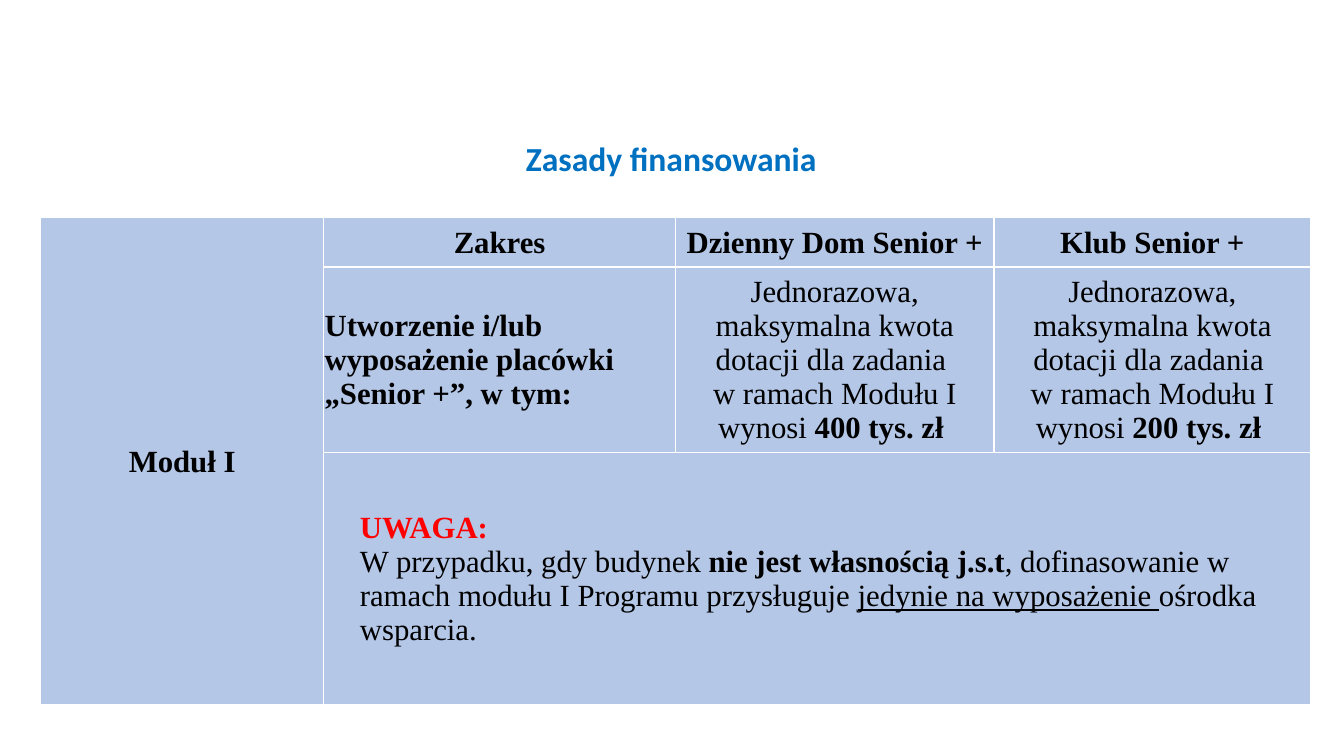
from lxml.etree import SubElement
from pptx import Presentation
from pptx.dml.color import RGBColor
from pptx.enum.text import MSO_ANCHOR, MSO_AUTO_SIZE, PP_ALIGN
from pptx.oxml.ns import qn
from pptx.util import Cm, Pt


def color(value):
    return RGBColor.from_string(value)


class FinancingSlide:
    title_color = "0070C0"
    cell_fill = "B4C7E7"
    border_color = "FFFFFF"
    text_color = "000000"
    warning_color = "FF0000"

    def __init__(self, presentation):
        self.slide = presentation.slides.add_slide(presentation.slide_layouts[5])

    def format_font(self, paragraph, name, size, font_color):
        paragraph.font.name = name
        paragraph.font.size = Pt(size)
        paragraph.font.color.rgb = color(font_color)

    def add_title(self, text, left, top, width, height):
        title = self.slide.shapes.title
        title.left, title.top = Cm(left), Cm(top)
        title.width, title.height = Cm(width), Cm(height)
        frame = title.text_frame
        frame.text = text
        frame.word_wrap = True
        frame.auto_size = MSO_AUTO_SIZE.SHAPE_TO_FIT_TEXT
        frame.vertical_anchor = MSO_ANCHOR.TOP
        paragraph = frame.paragraphs[0]
        paragraph.alignment = PP_ALIGN.CENTER
        paragraph.line_spacing = 1.0
        self.format_font(paragraph, "Calibri", 24, self.title_color)
        paragraph.font.bold = True

    def add_table(self, left, top, widths, heights):
        frame = self.slide.shapes.add_table(
            len(heights), len(widths), Cm(left), Cm(top),
            Cm(sum(widths)), Cm(sum(heights)))
        table = frame.table
        table.first_row = table.horz_banding = False
        for column, width in zip(table.columns, widths):
            column.width = Cm(width)
        for row, height in zip(table.rows, heights):
            row.height = Cm(height)
        for cell in table.iter_cells():
            self.format_cell(cell)
        return table

    def format_cell(self, cell):
        properties = cell._tc.get_or_add_tcPr()
        for side in ("a:lnL", "a:lnR", "a:lnT", "a:lnB"):
            line = SubElement(properties, qn(side), w=str(Pt(1)))
            fill = SubElement(line, qn("a:solidFill"))
            SubElement(fill, qn("a:srgbClr"), val=self.border_color)
        cell.fill.solid()
        cell.fill.fore_color.rgb = color(self.cell_fill)
        cell.vertical_anchor = MSO_ANCHOR.MIDDLE
        cell.margin_left = cell.margin_right = cell.margin_top = Cm(0.02)
        cell.margin_bottom = 0

    def add_text(self, paragraph, *parts, alignment=PP_ALIGN.CENTER, font_color=None):
        """Each part is a text with its bold and underline settings."""
        paragraph.alignment = alignment
        self.format_font(paragraph, "Times New Roman", 22, font_color or self.text_color)
        for text, bold, underline in parts:
            for index, line in enumerate(text.split("\n")):
                if index:
                    paragraph.add_line_break()
                run = paragraph.add_run()
                run.text = line
                run.font.bold = bold
                run.font.underline = underline


def main():
    presentation = Presentation()
    presentation.slide_width, presentation.slide_height = Cm(33.87), Cm(19.05)
    page = FinancingSlide(presentation)

    # Title
    page.add_title("Zasady finansowania ", 7.77, 3.35, 18.49, 1.27)

    # Table grid
    table = page.add_table(1.02, 5.49, [7.14, 8.86, 8.03, 7.98], [1.24, 4.32, 6.35])
    table.cell(0, 0).merge(table.cell(2, 0))
    table.cell(2, 1).merge(table.cell(2, 3))

    # Module and column headings
    headings = ["Moduł I", "Zakres", "Dzienny Dom Senior +", "Klub Senior +"]
    for column, heading in enumerate(headings):
        page.add_text(table.cell(0, column).text_frame.paragraphs[0], (heading, True, False))

    # Scope and grant limits
    page.add_text(table.cell(1, 1).text_frame.paragraphs[0],
                  ("Utworzenie i/lub wyposażenie placówki „Senior +”, w tym:", True, False),
                  alignment=PP_ALIGN.LEFT)
    grant = "Jednorazowa, maksymalna kwota dotacji dla zadania \nw ramach Modułu I wynosi "
    for column, amount in enumerate(["400 tys. zł ", "200 tys. zł "], start=2):
        page.add_text(table.cell(1, column).text_frame.paragraphs[0],
                      (grant, False, False), (amount, True, False))

    # Note on ownership
    note = table.cell(2, 1)
    note.margin_left = Cm(0.91)
    page.add_text(note.text_frame.paragraphs[0], ("UWAGA:", True, False),
                  alignment=PP_ALIGN.LEFT, font_color=page.warning_color)
    page.add_text(note.text_frame.add_paragraph(),
                  ("W przypadku, gdy budynek ", False, False),
                  ("nie jest własnością j.s.t", True, False),
                  (", dofinasowanie w ramach modułu I Programu przysługuje ", False, False),
                  ("jedynie na wyposażenie ", False, True),
                  ("ośrodka wsparcia.", False, False),
                  alignment=PP_ALIGN.LEFT)

    presentation.save("out.pptx")


if __name__ == "__main__":
    main()
